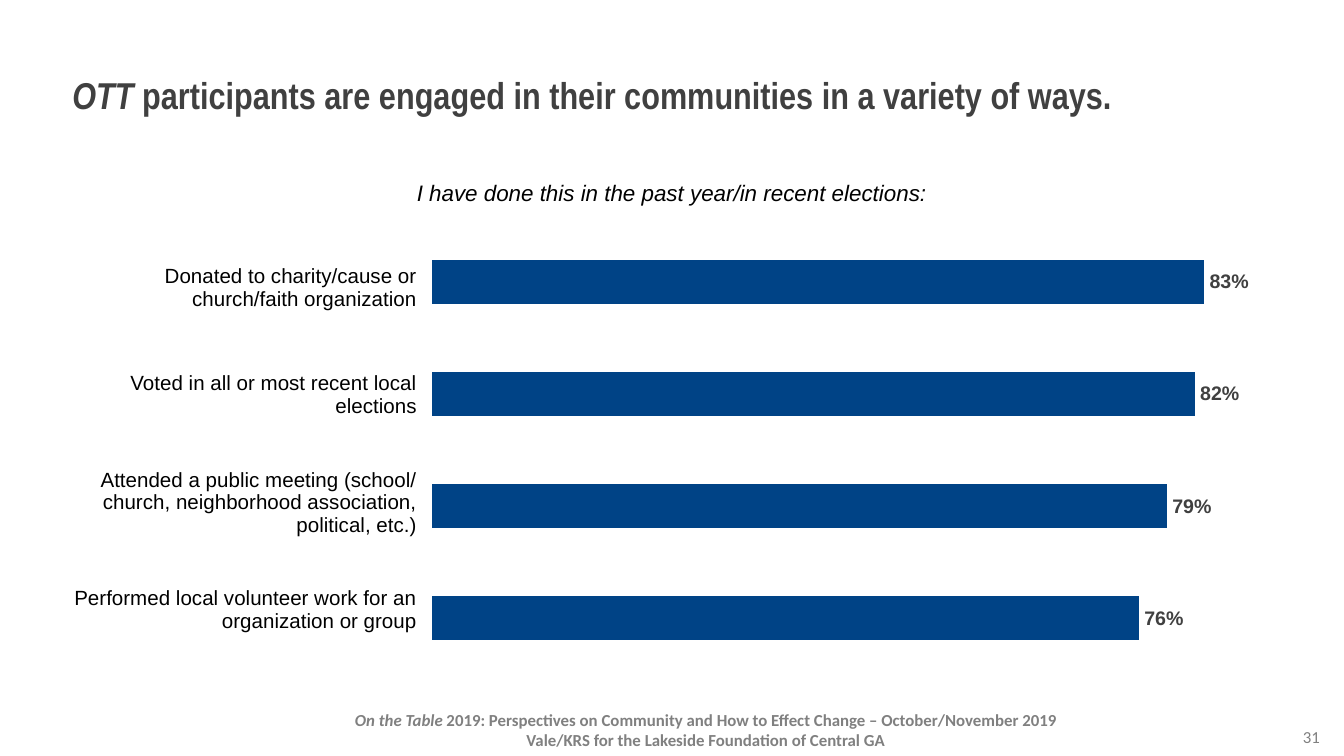
from pptx import Presentation
from pptx.chart.data import CategoryChartData
from pptx.dml.color import RGBColor
from pptx.enum.chart import XL_CHART_TYPE, XL_LABEL_POSITION
from pptx.enum.text import MSO_ANCHOR, PP_ALIGN
from pptx.oxml import parse_xml
from pptx.oxml.ns import nsdecls
from pptx.util import Inches, Pt

BAR = XL_CHART_TYPE.BAR_CLUSTERED
OUTSIDE = XL_LABEL_POSITION.OUTSIDE_END
LEFT, CENTER, RIGHT = PP_ALIGN.LEFT, PP_ALIGN.CENTER, PP_ALIGN.RIGHT
TOP, MIDDLE = MSO_ANCHOR.TOP, MSO_ANCHOR.MIDDLE

SLIDE_WIDTH = Inches(10)
SLIDE_HEIGHT = SLIDE_WIDTH * 9 // 16
BLACK, CHARCOAL, GRAY, NAVY = "000000", "404040", "808080", "004386"

ACTIVITIES = [
    ("Donated to charity/cause or\vchurch/faith organization", 0.83),
    ("Voted in all or most recent local elections", 0.82),
    ("Attended a public meeting (school/ church, neighborhood association, political, etc.)", 0.79),
    ("Performed local volunteer work for an organization or group", 0.76),
]


def color(hex_code):
    """Turn a hex string into a colour."""
    return RGBColor.from_string(hex_code)


def area(left, top, width, height):
    """Turn percentages of the slide into left, top, width and height."""
    return (
        int(SLIDE_WIDTH * left / 100),
        int(SLIDE_HEIGHT * top / 100),
        int(SLIDE_WIDTH * width / 100),
        int(SLIDE_HEIGHT * height / 100),
    )


def style_font(font, name, size, hex_code, bold=False, italic=False):
    """Set the typeface, size, colour and emphasis of a font."""
    font.name, font.size = name, Pt(size)
    font.bold, font.italic = bold, italic
    font.color.rgb = color(hex_code)


def add_runs(paragraph, runs, align, name, size, hex_code, bold=False):
    """Add (words, italic) runs to a paragraph."""
    paragraph.alignment = align
    for words, italic in runs:
        for index, line in enumerate(words.split("\v")):
            if index:
                paragraph.add_line_break()
            run = paragraph.add_run()
            run.text = line
            style_font(run.font, name, size, hex_code, bold, italic)


def add_text(slide, place, lines, align, name, size, hex_code, bold=False, anchor=TOP, wrap=True):
    """Add a text box with one paragraph for each list of runs."""
    frame = slide.shapes.add_textbox(*area(*place)).text_frame
    frame.word_wrap, frame.vertical_anchor = wrap, anchor
    for index, runs in enumerate(lines):
        paragraph = frame.add_paragraph() if index else frame.paragraphs[0]
        add_runs(paragraph, runs, align, name, size, hex_code, bold)


def add_activity_chart(slide, place):
    """Add the bars, with the first activity on top."""
    data = CategoryChartData(number_format="0%")
    data.categories = [str(number + 1) for number in range(len(ACTIVITIES))]
    data.add_series("Series 1", [share for _, share in reversed(ACTIVITIES)])
    chart = slide.shapes.add_chart(BAR, *area(*place), data).chart
    chart.has_legend = chart.has_title = False
    style_font(chart.font, "Arial", 10, BLACK)

    share_axis = chart.value_axis
    share_axis.minimum_scale, share_axis.maximum_scale = 0, 0.9
    share_axis.has_major_gridlines = False
    share_axis.visible = chart.category_axis.visible = False

    plot = chart.plots[0]
    plot.gap_width, plot.vary_by_categories = 155, False
    bars = plot.series[0]
    bars.format.fill.solid()
    bars.format.fill.fore_color.rgb = color(NAVY)
    labels = bars.data_labels
    labels.show_value, labels.position = True, OUTSIDE
    labels.number_format, labels.number_format_is_linked = "0%", False
    style_font(labels.font, "Arial", 10.5, CHARCOAL, bold=True)
    set_plot_margin(chart, 0.02)


def set_plot_margin(chart, margin):
    """Inset the plot by an equal share of the chart on each side."""
    inner = 1 - 2 * margin
    plot_area = chart.element.chart.plotArea
    for layout in plot_area.findall("{*}layout"):
        plot_area.remove(layout)
    plot_area.insert(0, parse_xml(
        f'<c:layout {nsdecls("c")}><c:manualLayout><c:layoutTarget val="inner"/>'
        '<c:xMode val="edge"/><c:yMode val="edge"/>'
        f'<c:x val="{margin}"/><c:y val="{margin}"/>'
        f'<c:w val="{inner}"/><c:h val="{inner}"/></c:manualLayout></c:layout>'
    ))


def add_activity_names(slide, place):
    """Add the one-column table that names each bar."""
    table = slide.shapes.add_table(len(ACTIVITIES), 1, *area(*place)).table
    table.first_row = table.horz_banding = False
    for row, (activity, _) in enumerate(ACTIVITIES):
        cell = table.cell(row, 0)
        cell.fill.background()
        cell.vertical_anchor = MIDDLE
        cell.margin_left = cell.margin_right = Inches(0.07)
        cell.margin_top = cell.margin_bottom = 0
        paragraph = cell.text_frame.paragraphs[0]
        paragraph.space_after = Pt(1.5)
        add_runs(paragraph, [(activity, False)], RIGHT, "Arial", 11, BLACK)


def main():
    """Build and save the slide."""
    deck = Presentation()
    deck.slide_width, deck.slide_height = SLIDE_WIDTH, SLIDE_HEIGHT
    slide = deck.slides.add_slide(deck.slide_layouts[6])

    source = [
        [("On the Table", True),
         (" 2019: Perspectives on Community and How to Effect Change – October/November 2019", False)],
        [("Vale/KRS for the Lakeside Foundation of Central GA", False)],
    ]
    headline = [[("OTT", True),
                 (" participants are engaged in their communities in a variety of ways.", False)]]
    question = [[("I have done this in the past year/in recent elections:", True)]]

    add_text(slide, (24.7, 92.98, 55.6, 7.11), source, CENTER, "Calibri", 9, GRAY, bold=True, wrap=False)
    add_text(slide, (4.4, 4.2, 91.4, 16.7), headline, LEFT, "Arial Narrow", 20, CHARCOAL,
             bold=True, anchor=MIDDLE)
    add_activity_chart(slide, (30.85, 28.6, 64.9, 61.87))
    add_text(slide, (92.8, 95.29, 6.4, 4.44), [[("31", False)]], RIGHT, "Calibri", 9, GRAY)
    add_text(slide, (5.9, 22.8, 88.2, 5.33), question, CENTER, "Arial", 12, BLACK)
    add_activity_names(slide, (3.4, 30.95, 28.3, 56.89))
    deck.save("out.pptx")


if __name__ == "__main__":
    main()
